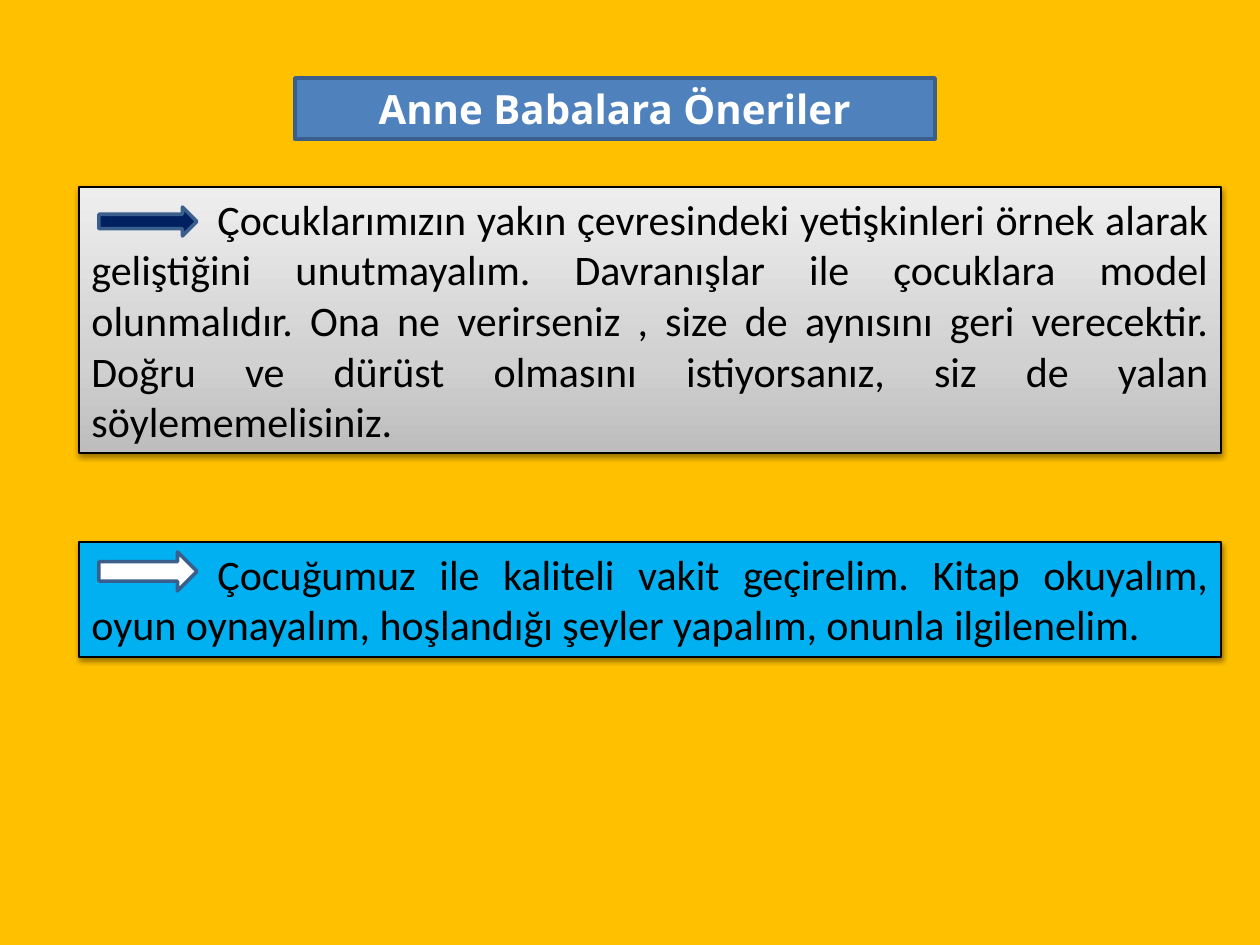
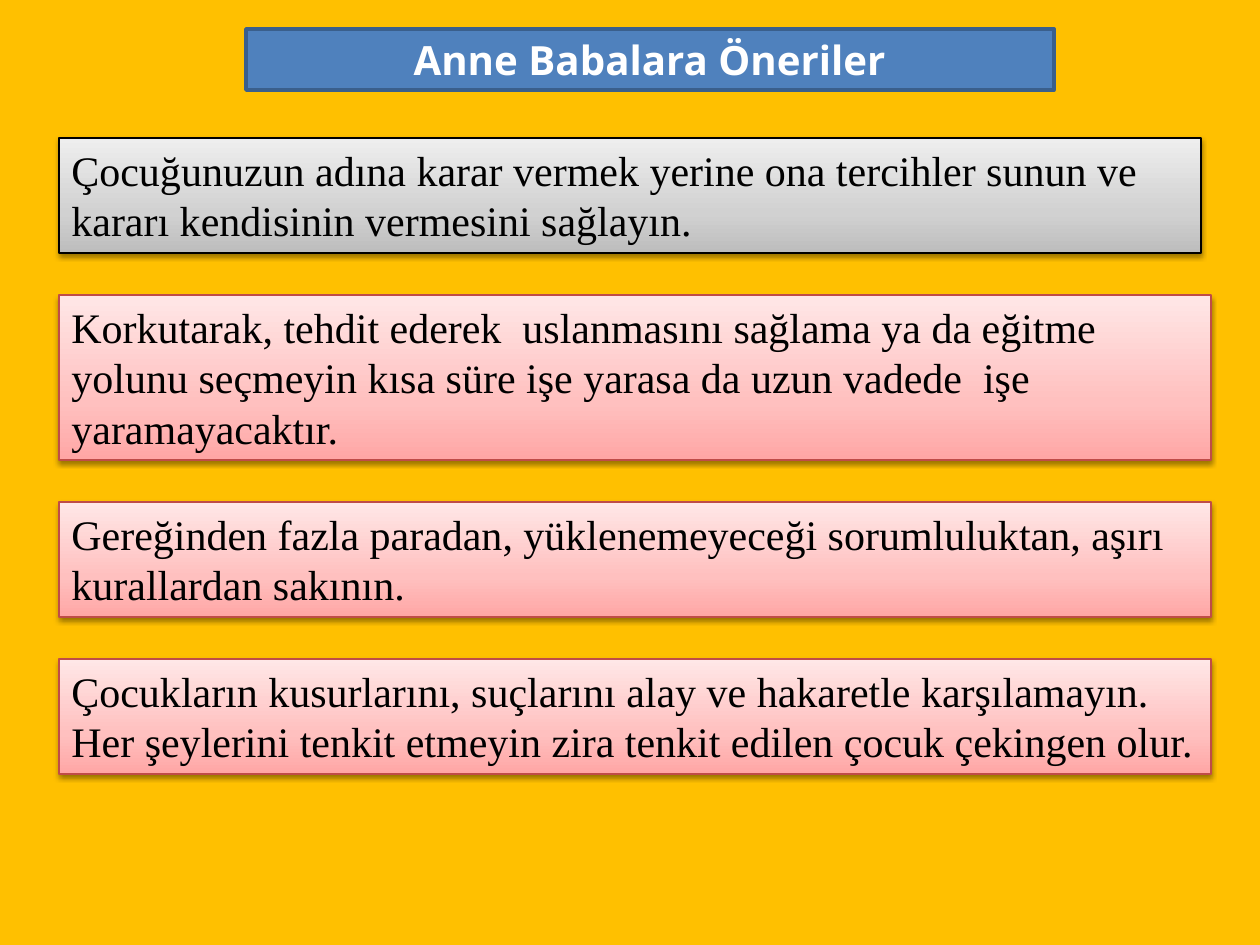
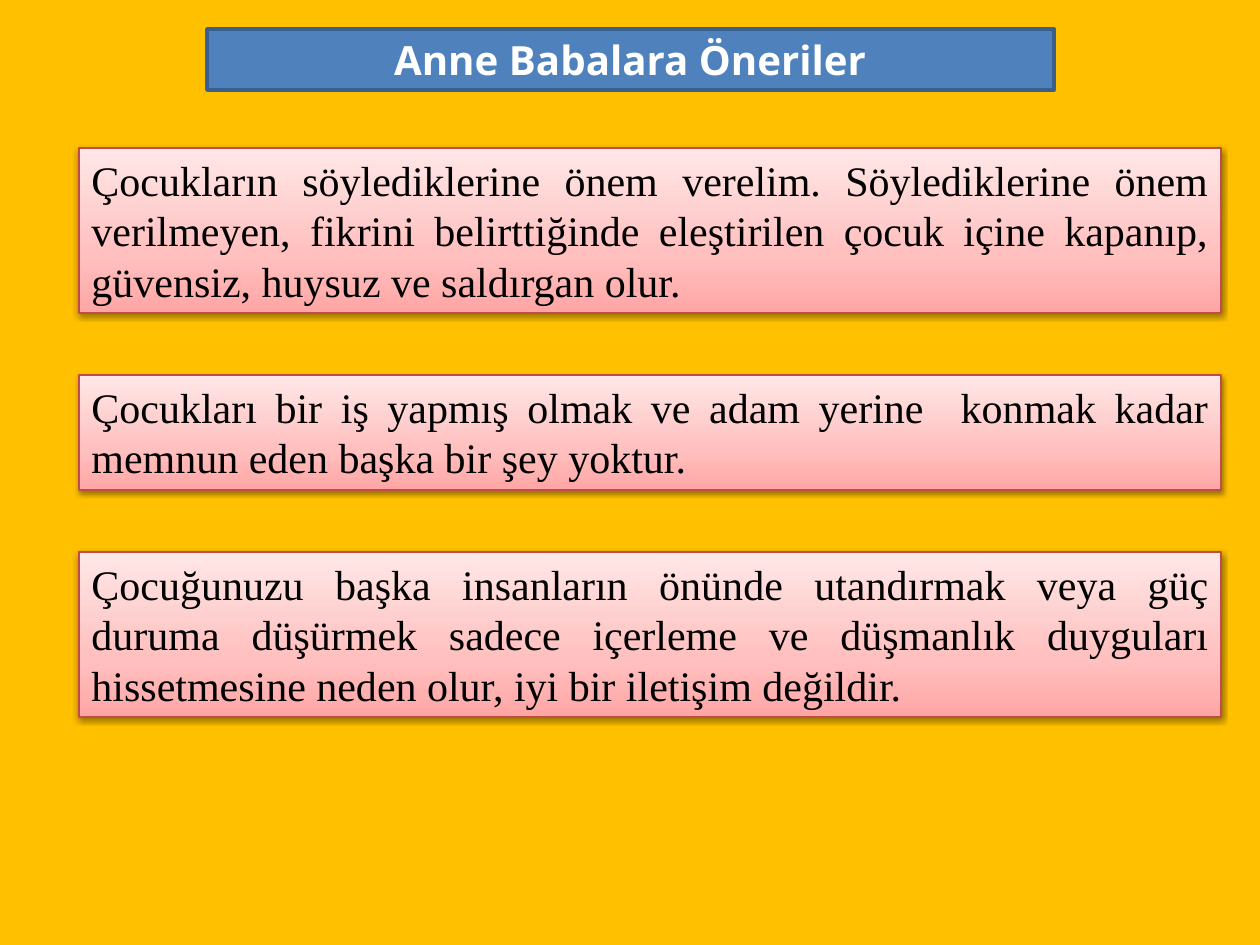
from copy import deepcopy
from pptx import Presentation
from pptx import util as u
from pptx.dml.color import RGBColor
from pptx.enum import shapes, text
from pptx.oxml import parse_xml
from pptx.oxml.ns import nsdecls, qn

TITLE = "Anne Babalara Öneriler"
SLIDES = [
    {"title": (295, 78, 640), "left": 79, "top": 187, "gap": 89,
     "font": "Calibri", "align": "JUSTIFY",
     "boxes": [
         ("grey", 1142, 5, "\tÇocuklarımızın yakın çevresindeki yetişkinleri örnek alarak geliştiğini unutmayalım. Davranışlar ile çocuklara model olunmalıdır. Ona ne verirseniz , size de aynısını geri verecektir. Doğru ve dürüst olmasını istiyorsanız, siz de yalan söylememelisiniz."),
         ("sky", 1142, 2, "\tÇocuğumuz ile kaliteli vakit geçirelim. Kitap okuyalım, oyun oynayalım, hoşlandığı şeyler yapalım, onunla ilgilenelim."),
     ],
     "arrows": [(207, 29, "002060"), (552, 39, "FFFFFF")]},
    {"title": (246, 29, 808), "left": 59, "top": 138, "gap": 42,
     "font": "Times New Roman", "align": "LEFT",
     "boxes": [
         ("grey", 1142, 2, "Çocuğunuzun adına karar vermek yerine ona tercihler sunun ve kararı kendisinin vermesini sağlayın."),
         ("rose", 1152, 3, "Korkutarak, tehdit ederek  uslanmasını sağlama ya da eğitme  yolunu seçmeyin kısa süre işe yarasa da uzun vadede  işe yaramayacaktır."),
         ("rose", 1152, 2, "Gereğinden fazla paradan, yüklenemeyeceği sorumluluktan, aşırı kurallardan sakının."),
         ("rose", 1152, 2, "Çocukların kusurlarını, suçlarını alay ve hakaretle karşılamayın. Her şeylerini tenkit etmeyin zira tenkit edilen çocuk çekingen olur."),
     ],
     "arrows": []},
    {"title": (207, 29, 847), "left": 79, "top": 148, "gap": 62,
     "font": "Times New Roman", "align": "JUSTIFY",
     "boxes": [
         ("rose", 1142, 3, "Çocukların söylediklerine önem verelim. Söylediklerine önem verilmeyen, fikrini belirttiğinde eleştirilen çocuk içine kapanıp, güvensiz, huysuz ve saldırgan olur."),
         ("rose", 1142, 2, "Çocukları bir iş yapmış olmak ve adam yerine  konmak kadar memnun eden başka bir şey yoktur."),
         ("rose", 1142, 3, "Çocuğunuzu başka insanların önünde utandırmak veya güç duruma düşürmek sadece içerleme ve düşmanlık duyguları hissetmesine neden olur, iyi bir iletişim değildir."),
     ],
     "arrows": []},
]

THEME = {
    "background": "FFC000",
    "banner": "4F81BD",
    "edge": "3A5F8C",
    "title": {"name": "Noto Sans", "size": u.Pt(23), "bold": True},
    "title_color": "FFFFFF",
    "body_size": u.Pt(24),
    "body_spacing": u.Pt(28.9),
    "body_color": "000000",
    "boxes": {
        "grey": (["BDBDBD", "D1D1D1", "EEEEEE"], "000000"),
        "rose": (["FFA6A5", "FFC0BF", "FFE7E7"], "BF4C48"),
        "sky": ("00B0F0", "000000"),
    },
    "stops": (0, 0.35, 1),
}
PX = u.Inches(1) / 126
TITLE_HEIGHT = 61
ARROW_INSET, ARROW_WIDTH = 20, 98
TAB_STOP = 126


def rgb(color):
    return RGBColor.from_string(color)


def emu(*lengths):
    return [u.Emu(round(n * PX)) for n in lengths]


def paint(sp, fill, line, width):
    if isinstance(fill, str):
        sp.fill.solid()
        sp.fill.fore_color.rgb = rgb(fill)
    else:
        sp.fill.gradient()
        sp.fill.gradient_angle = 90
        gs = sp._element.spPr.find(".//" + qn("a:gsLst"))
        gs.append(deepcopy(gs[0]))
        for stop, pos, color in zip(sp.fill.gradient_stops, THEME["stops"], fill):
            stop.position = pos
            stop.color.rgb = rgb(color)
    sp.line.color.rgb = rgb(line)
    sp.line.width = u.Pt(width)


def write(sp, content, font, color, align, anchor, spacing=None):
    tf = sp.text_frame
    tf.text = content
    for key, value in {"word_wrap": True, "auto_size": text.MSO_AUTO_SIZE.NONE,
                       "vertical_anchor": anchor}.items():
        setattr(tf, key, value)
    p = tf.paragraphs[0]
    p.alignment = align
    p.line_spacing = spacing
    if content.startswith("\t"):
        p._p.get_or_add_pPr().append(parse_xml(
            f'<a:tabLst {nsdecls("a")}><a:tab pos="{emu(TAB_STOP)[0]}" algn="l"/></a:tabLst>'))
    r = p.runs[0]
    for key, value in font.items():
        setattr(r.font, key, value)
    r.font.color.rgb = rgb(color)


def add_shape(s, kind, box, fill, line, width):
    sp = s.shapes.add_shape(kind, *emu(*box))
    sp.shadow.inherit = False
    paint(sp, fill, line, width)
    return sp


def add_shadow(sp):
    sp._element.spPr.find(qn("a:effectLst")).append(parse_xml(
        f'<a:outerShdw {nsdecls("a")} blurRad="{u.Pt(3.1)}" dist="{u.Pt(1.6)}" '
        'dir="5400000" rotWithShape="0"><a:srgbClr val="000000">'
        '<a:alpha val="38000"/></a:srgbClr></a:outerShdw>'))


def add_title(s, left, top, width):
    sp = s.shapes.title
    sp.left, sp.top, sp.width, sp.height = emu(left, top, width, TITLE_HEIGHT)
    paint(sp, THEME["banner"], THEME["edge"], 2)
    write(sp, TITLE, THEME["title"], THEME["title_color"],
          text.PP_ALIGN.CENTER, text.MSO_ANCHOR.MIDDLE)


def add_advice(s, data):
    top = data["top"]
    font = {"name": data["font"], "size": THEME["body_size"]}
    for style, width, lines, content in data["boxes"]:
        height = 14 + lines * 101 // 2
        sp = add_shape(s, shapes.MSO_SHAPE.RECTANGLE,
                       (data["left"], top, width, height), *THEME["boxes"][style], 0.75)
        add_shadow(sp)
        write(sp, content, font, THEME["body_color"],
              getattr(text.PP_ALIGN, data["align"]), text.MSO_ANCHOR.TOP,
              THEME["body_spacing"])
        top += height + data["gap"]


def main():
    prs = Presentation()
    prs.slide_width, prs.slide_height = u.Inches(10), u.Inches(7.5)
    fill = prs.slide_master.background.fill
    fill.solid()
    fill.fore_color.rgb = rgb(THEME["background"])
    for data in SLIDES:
        s = prs.slides.add_slide(prs.slide_layouts[5])
        add_title(s, *data["title"])
        add_advice(s, data)
        for top, height, color in data["arrows"]:
            add_shape(s, shapes.MSO_SHAPE.RIGHT_ARROW,
                      (data["left"] + ARROW_INSET, top, ARROW_WIDTH, height),
                      color, THEME["edge"], 2)
    prs.save("out.pptx")


if __name__ == "__main__":
    main()
